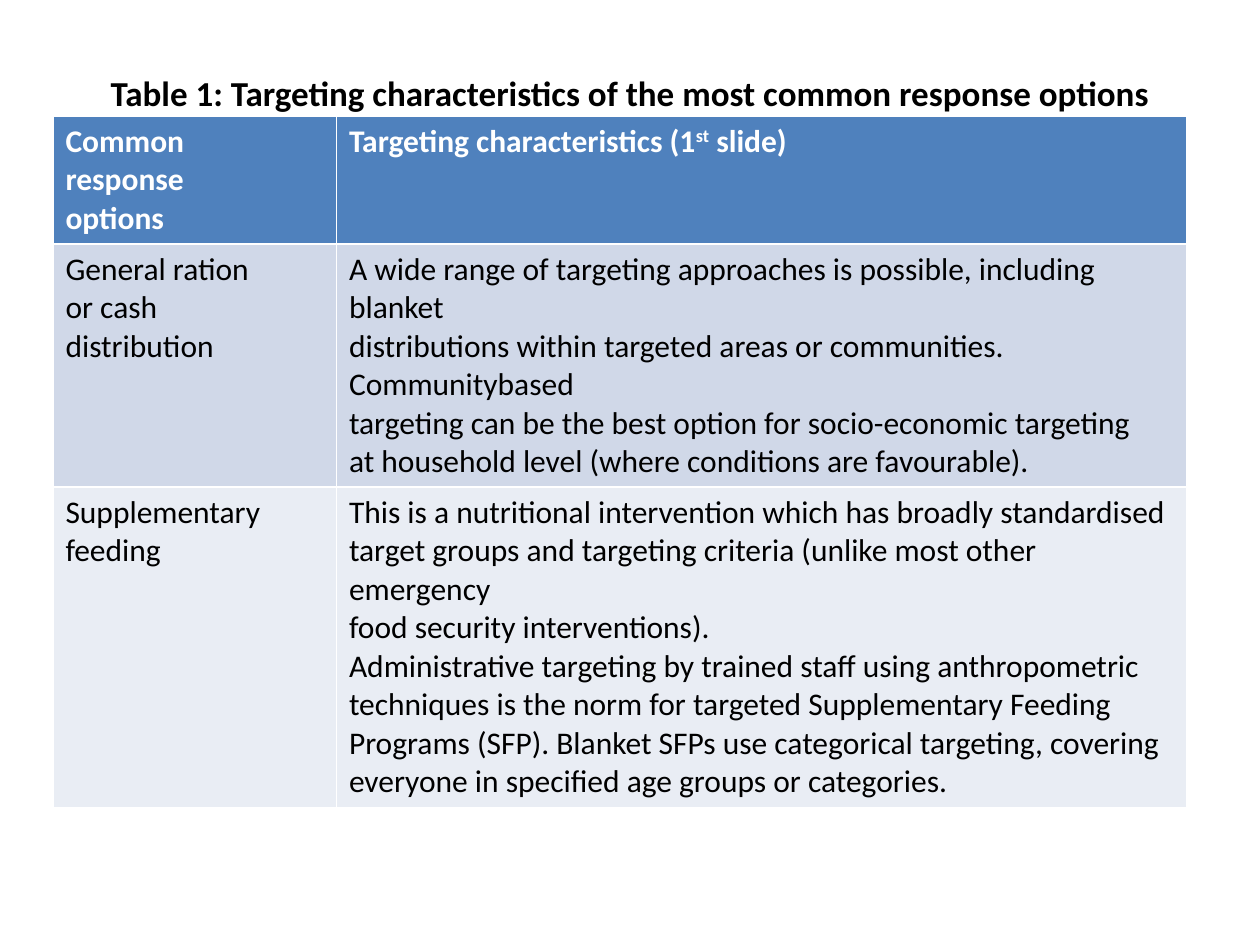
from pptx import Presentation
from pptx.dml.color import RGBColor
from pptx.enum.text import MSO_ANCHOR, MSO_AUTO_SIZE, PP_ALIGN
from pptx.util import Inches, Pt

FONT = "Calibri"
BLACK = RGBColor(0x00, 0x00, 0x00)
WHITE = RGBColor(0xFF, 0xFF, 0xFF)
HEADER_BLUE = RGBColor(0x4F, 0x81, 0xBD)
BAND_DARK = RGBColor(0xD0, 0xD8, 0xE8)
BAND_LIGHT = RGBColor(0xE9, 0xED, 0xF4)
TITLE_ONLY = 5
SUPERSCRIPT = "30000"

TITLE = "Table 1: Targeting characteristics of the most common response options"
COLUMN_WIDTHS = (2.25, 6.75)
ROW_HEIGHTS = (1.0, 1.93, 2.53)
ROW_FILLS = (HEADER_BLUE, BAND_DARK, BAND_LIGHT)

# Each cell is a list of lines; a line in parts is a tuple of (text, is superscript).
ROWS = [
    (
        ["Common", "response", "options"],
        [(("Targeting characteristics (1", False), ("st", True), (" slide)", False))],
    ),
    (
        ["General ration", "or cash", "distribution"],
        [
            "A wide range of targeting approaches is possible, including blanket",
            "distributions within targeted areas or communities. Communitybased",
            "targeting can be the best option for socio-economic targeting",
            "at household level (where conditions are favourable).",
        ],
    ),
    (
        ["Supplementary", "feeding"],
        [
            "This is a nutritional intervention which has broadly standardised",
            "target groups and targeting criteria (unlike most other emergency",
            "food security interventions).",
            "Administrative targeting by trained staff using anthropometric",
            "techniques is the norm for targeted Supplementary Feeding",
            "Programs (SFP). Blanket SFPs use categorical targeting, covering",
            "everyone in specified age groups or categories.",
        ],
    ),
]


def add_run(p, text, size, color, bold, superscript=False):
    r = p.add_run()
    r.text = text
    r.font.name = FONT
    r.font.size = Pt(size)
    r.font.bold = bold
    r.font.color.rgb = color
    if superscript:
        r.font._element.set("baseline", SUPERSCRIPT)


def set_title(s):
    title = s.shapes.title
    title.left, title.top = Inches(0.5), Inches(0.3)
    title.width, title.height = Inches(9), Inches(0.87)
    tf = title.text_frame
    tf.auto_size = MSO_AUTO_SIZE.NONE
    tf.vertical_anchor = MSO_ANCHOR.MIDDLE
    p = tf.paragraphs[0]
    p.alignment = PP_ALIGN.CENTER
    add_run(p, TITLE, 20, BLACK, True)


def fill_cell(cell, lines, fill, color, bold):
    cell.fill.solid()
    cell.fill.fore_color.rgb = fill
    tf = cell.text_frame
    for i, line in enumerate(lines):
        p = tf.add_paragraph() if i else tf.paragraphs[0]
        parts = ((line, False),) if isinstance(line, str) else line
        for text, superscript in parts:
            add_run(p, text, 18, color, bold, superscript)


def add_options_table(s):
    table = s.shapes.add_table(
        len(ROWS), len(COLUMN_WIDTHS), Inches(0.42), Inches(0.92),
        Inches(sum(COLUMN_WIDTHS)), Inches(sum(ROW_HEIGHTS)),
    ).table
    for column, width in zip(table.columns, COLUMN_WIDTHS):
        column.width = Inches(width)
    for i, (row, height, fill) in enumerate(zip(table.rows, ROW_HEIGHTS, ROW_FILLS)):
        row.height = Inches(height)
        is_header = i == 0
        for cell, lines in zip(row.cells, ROWS[i]):
            fill_cell(cell, lines, fill, WHITE if is_header else BLACK, is_header)


def main():
    prs = Presentation()
    prs.slide_width, prs.slide_height = Inches(10), Inches(7.5)
    s = prs.slides.add_slide(prs.slide_layouts[TITLE_ONLY])
    set_title(s)
    add_options_table(s)
    prs.save("out.pptx")


if __name__ == "__main__":
    main()
